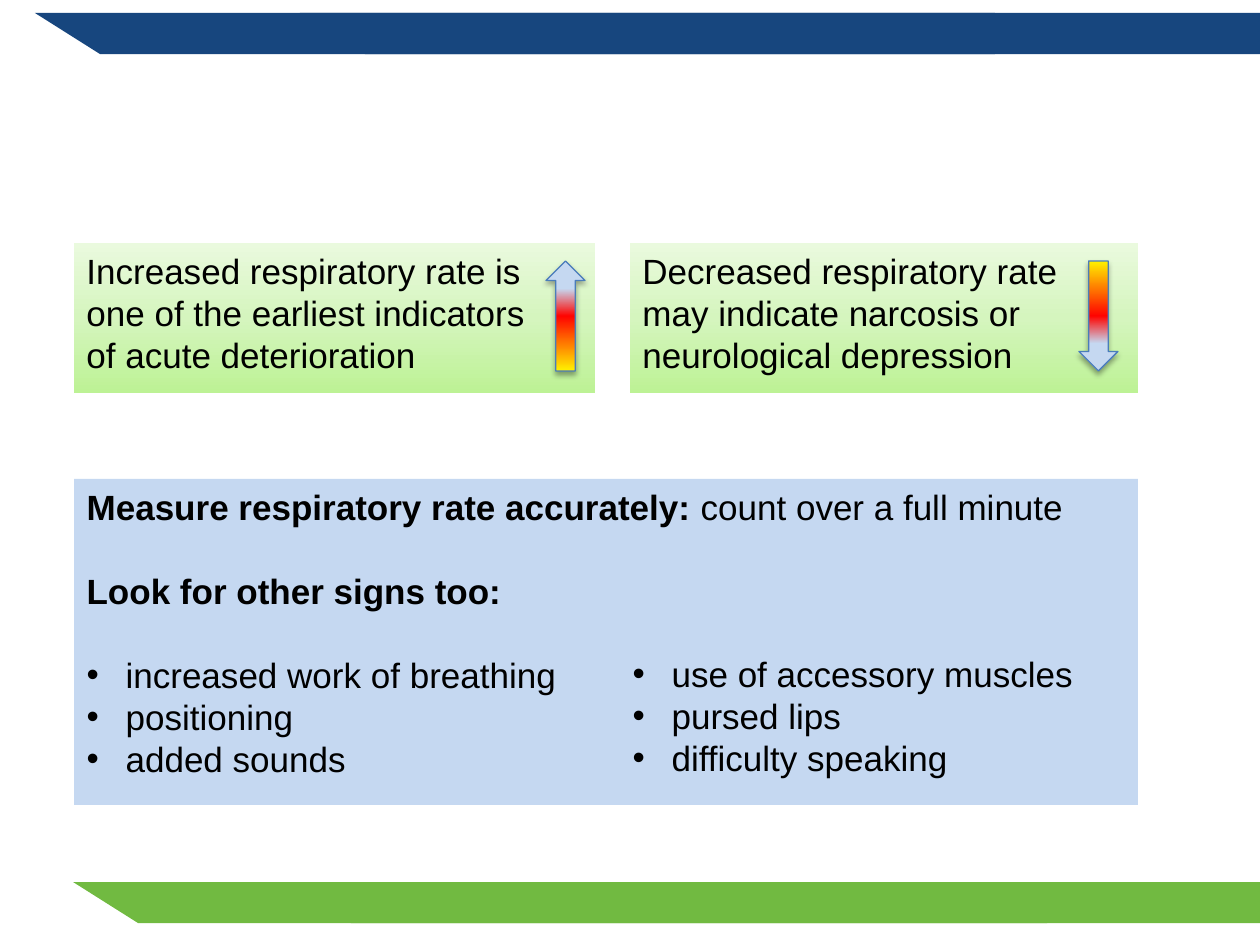
from lxml import etree
from pptx import Presentation, util as u
from pptx.dml.color import RGBColor
from pptx.enum import shapes, text
from pptx.oxml.ns import qn

SCALE = 914400 / 126  # EMU per px
INK, GREEN, NAVY, SKY = "000000", "71BA41", "17467E", "C5D8F1"
LIME = [(0, "BDF295"), (50, "D5F5BE"), (100, "EAFADE")]
HEAT = [(0, "FFF200"), (25, "FF7A00"), (50, "FF0300"), (75, SKY), (100, SKY)]


def px(length):
    return u.Emu(round(length * SCALE))


def rgb(value):
    return RGBColor.from_string(value)


def child(parent, tag, **attributes):
    return etree.SubElement(parent, qn(tag), {k: str(v) for k, v in attributes.items()})


class SlideBuilder:
    font, size, leading, indent = "Arial", u.Pt(20), u.Pt(24), 39

    def __init__(self, page):
        self.page = page

    def band(self, left, top, width, color, height=41, slant=65):
        builder = self.page.shapes.build_freeform(left, top, scale=SCALE)
        builder.add_line_segments([(left + width, top), (left + width, top + height),
                                   (left + slant, top + height)])
        shape = builder.convert_to_shape()
        shape.shadow.inherit = False
        shape.fill.solid()
        shape.fill.fore_color.rgb = rgb(color)
        shape.line.fill.background()

    def gradient(self, shape, stops, angle):
        shape.fill.gradient()
        grad = shape._element.spPr.find(qn("a:gradFill"))
        stop_list = grad.find(qn("a:gsLst"))
        for stop in list(stop_list):
            stop_list.remove(stop)
        for position, color in stops:
            stop = child(stop_list, "a:gs", pos=position * 1000)
            child(stop, "a:srgbClr", val=color)
        grad.find(qn("a:lin")).set("ang", str(angle * 60000))

    def fill_text(self, frame, lines):
        """Each line is (spans, bulleted, space before); a span is (text, bold)."""
        frame.word_wrap = True
        frame.auto_size = text.MSO_AUTO_SIZE.NONE
        frame.vertical_anchor = text.MSO_ANCHOR.TOP
        for number, (spans, bulleted, gap) in enumerate(lines):
            para = frame.add_paragraph() if number else frame.paragraphs[0]
            self.bullet(para, bulleted)
            para.alignment = text.PP_ALIGN.LEFT
            para.line_spacing = self.leading
            para.space_before = u.Pt(gap)
            for words, bold in spans:
                span = para.add_run()
                span.text = words
                span.font.name, span.font.size, span.font.bold = self.font, self.size, bold
                span.font.color.rgb = rgb(INK)

    def bullet(self, para, bulleted):
        props = para._p.get_or_add_pPr()
        margin = px(self.indent) if bulleted else 0
        props.set("marL", str(margin))
        props.set("indent", str(-margin))
        if bulleted:
            child(child(props, "a:buClr"), "a:srgbClr", val=INK)
            child(props, "a:buFont", typeface=self.font)
            child(props, "a:buChar", char="•")
        else:
            child(props, "a:buNone")

    def body(self, index, left, top, width, height, lines, fill=None):
        box = self.page.placeholders[index]
        box.left, box.top, box.width, box.height = map(px, (left, top, width, height))
        if fill:
            box.fill.solid()
            box.fill.fore_color.rgb = rgb(fill)
        self.fill_text(box.text_frame, lines)

    def card(self, left, top, width, height, lines):
        box = self.page.shapes.add_shape(shapes.MSO_SHAPE.RECTANGLE,
                                         *map(px, (left, top, width, height)))
        box.shadow.inherit = False
        box.line.fill.background()
        self.gradient(box, LIME, 270)
        self.fill_text(box.text_frame, [([(line, False)], False, 0) for line in lines])

    def arrow(self, left, top, rotation=0):
        arrow = self.page.shapes.add_shape(shapes.MSO_SHAPE.DOWN_ARROW,
                                           *map(px, (left, top, 39, 110)))
        arrow.rotation = rotation
        self.gradient(arrow, HEAT, 90)
        arrow.line.color.rgb = rgb("4A7DBA")
        arrow.line.width = u.Pt(0.75)
        # Soft shadow straight below
        arrow.shadow.inherit = False
        effects = arrow._element.spPr.find(qn("a:effectLst"))
        shadow = child(effects, "a:outerShdw", blurRad=u.Pt(3.1), dist=u.Pt(1.8),
                       dir=90 * 60000, rotWithShape=0)
        child(child(shadow, "a:srgbClr", val=INK), "a:alpha", val=35000)


def main():
    deck = Presentation()
    deck.slide_width, deck.slide_height = px(1260), px(945)
    page = deck.slides.add_slide(deck.slide_layouts[3])
    title = page.shapes.title._element
    title.getparent().remove(title)
    slide = SlideBuilder(page)

    # Overlapping bands along the top and bottom edges
    for left in (73, 286):
        slide.band(left, 882, 974, GREEN)
    for left in (35, 300):
        slide.band(left, 13, 960, NAVY)

    # Advice panel with two bulleted lists
    def bullets(items, first_gap=0):
        return [([(item, False)], True, 0 if number else first_gap)
                for number, item in enumerate(items)]

    advice = [
        ([("Measure respiratory rate accurately: ", True),
          ("count over a full minute", False)], False, 0),
        ([("Look for other signs too:", True)], False, 24),
    ]
    left_signs = ["increased work of breathing", "positioning", "added sounds"]
    right_signs = ["use of accessory muscles", "pursed lips", "difficulty speaking"]
    slide.body(1, 74, 479, 1064, 326, advice + bullets(left_signs, 24), SKY)
    slide.body(2, 620, 646, 479, 137, bullets(right_signs))

    # Rate cards, each with its arrow
    slide.card(74, 243, 521, 150, ["Increased respiratory rate is",
                                   "one of the earliest indicators",
                                   "of acute deterioration"])
    slide.card(630, 243, 508, 150, ["Decreased respiratory rate",
                                    "may indicate narcosis or neurological depression"])
    slide.arrow(546, 261, rotation=180)
    slide.arrow(1079, 261)

    deck.save("out.pptx")


if __name__ == "__main__":
    main()
